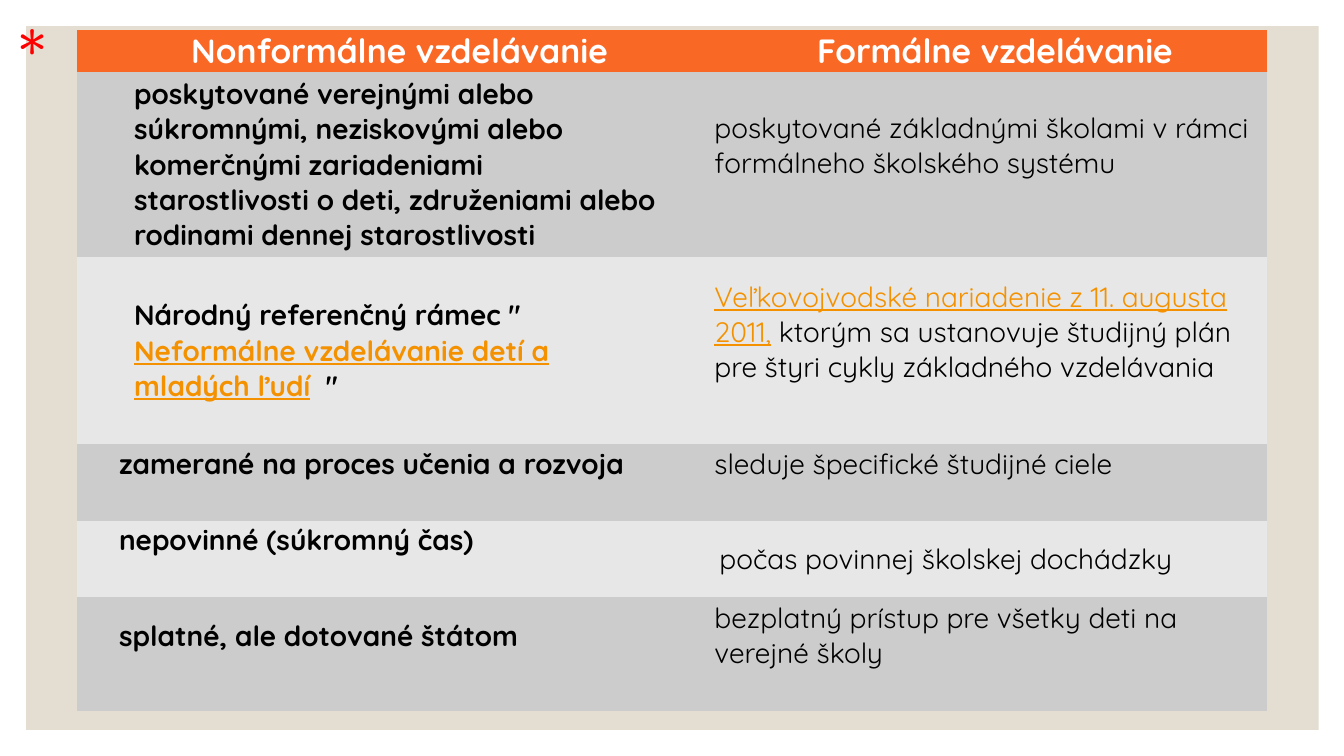
from dataclasses import dataclass

from lxml import etree
from pptx import Presentation
from pptx import util as u
from pptx.dml.color import RGBColor
from pptx.enum import shapes, text

NO_GRID_STYLE = "{2D5ABB26-0587-4C30-8999-92F81FD0307C}"
MIDDLE, TOP = text.MSO_ANCHOR.MIDDLE, text.MSO_ANCHOR.TOP


@dataclass(frozen=True)
class Theme:
    """Colours, font and type sizes of the slide."""
    font: str = "Quicksand"
    heading: int = 24
    body: int = 20
    mark: int = 60
    backdrop: str = "E3DED1"
    header: str = "FA6826"
    bands: tuple = ("CCCCCC", "E7E7E7")
    white: str = "FFFFFF"
    ink: str = "000000"
    link: str = "F49100"
    red: str = "FF0000"


@dataclass(frozen=True)
class Entry:
    """One table cell: wording with links between underscores, indent and gap below."""
    wording: str
    indent: float = 2.63
    gap: float = 4.93


class ComparisonSlide:
    """A slide on a grid of 100 columns by 100 rows."""

    def __init__(self, deck, theme):
        """Add an empty slide to the deck."""
        self.theme = theme
        self.column = deck.slide_width / 100
        self.row = deck.slide_height / 100
        self.shapes = deck.slides.add_slide(deck.slide_layouts[6]).shapes

    def x(self, columns):
        """Turn columns into a length."""
        return u.Emu(round(columns * self.column))

    def y(self, rows):
        """Turn rows into a length."""
        return u.Emu(round(rows * self.row))

    def box(self, left, top, width, height):
        """Turn a grid area into position and size."""
        return self.x(left), self.y(top), self.x(width), self.y(height)

    def style(self, run, size, colour, bold=False, underline=False):
        """Format one run."""
        run.font.name = self.theme.font
        run.font.size = u.Pt(size)
        run.font.bold = bold
        run.font.underline = underline
        run.font.color.rgb = RGBColor.from_string(colour)

    def panel(self, area, colour):
        """Draw a plain filled rectangle."""
        panel = self.shapes.add_shape(shapes.MSO_SHAPE.RECTANGLE, *self.box(*area))
        panel.shadow.inherit = False
        panel.fill.solid()
        panel.fill.fore_color.rgb = RGBColor.from_string(colour)
        panel.line.fill.background()

    def label(self, area, wording, size, colour):
        """Place a line of free text."""
        frame = self.shapes.add_textbox(*self.box(*area)).text_frame
        frame.word_wrap = True
        frame.text = wording
        self.style(frame.paragraphs[0].runs[0], size, colour)

    def fill_cell(self, cell, entry, colour, anchor):
        """Set a cell's fill, margins and anchor, and return its indented paragraph."""
        cell.fill.solid()
        cell.fill.fore_color.rgb = RGBColor.from_string(colour)
        cell.margin_left = cell.margin_right = self.x(0.53)
        cell.margin_top, cell.margin_bottom = 0, self.y(entry.gap)
        cell.vertical_anchor = anchor
        paragraph = cell.text_frame.paragraphs[0]
        properties = paragraph._p.get_or_add_pPr()
        properties.set("marL", str(self.x(entry.indent)))
        properties.set("indent", "0")
        return paragraph

    def table(self, area, heights, headings, entries):
        """Build the comparison table with a header and banded rows."""
        theme = self.theme
        table = self.shapes.add_table(len(heights), len(headings), *self.box(*area)).table
        table.horz_banding = False
        etree.SubElement
        table._tbl.tblPr.find("{*}tableStyleId").text = NO_GRID_STYLE
        for row, height in zip(table.rows, heights):
            row.height = self.y(height)
        for cell, heading in zip(table.rows[0].cells, headings):
            paragraph = self.fill_cell(cell, heading, theme.header, TOP)
            paragraph.text = heading.wording
            paragraph.alignment = text.PP_ALIGN.CENTER
            self.style(paragraph.runs[0], theme.heading, theme.white, bold=True)
        for r, pair in enumerate(entries):
            for c, entry in enumerate(pair):
                cell = table.cell(r + 1, c)
                paragraph = self.fill_cell(cell, entry, theme.bands[r % 2], MIDDLE)
                for n, part in enumerate(entry.wording.split("_")):
                    if part:
                        run = paragraph.add_run()
                        run.text = part
                        linked = n % 2 == 1
                        self.style(run, theme.body, theme.link if linked else theme.ink,
                                   bold=c == 0, underline=linked)


HEADINGS = [Entry("Nonformálne vzdelávanie", 3.75, 0), Entry("Formálne vzdelávanie", 3.75, 0)]
ENTRIES = [
    (Entry("poskytované verejnými alebo súkromnými, neziskovými alebo komerčnými zariadeniami "
           "starostlivosti o deti, združeniami alebo rodinami dennej starostlivosti", 3.75, 0),
     Entry("poskytované základnými školami v rámci formálneho školského systému")),
    (Entry('Národný referenčný rámec "  _Neformálne vzdelávanie detí a mladých ľudí_  "', 3.75, 0),
     Entry("_Veľkovojvodské nariadenie z 11. augusta 2011,_ ktorým sa ustanovuje študijný plán "
           "pre štyri cykly základného vzdelávania")),
    (Entry("zamerané na proces učenia a rozvoja"), Entry("sleduje špecifické študijné ciele")),
    (Entry("nepovinné (súkromný čas)"), Entry("počas povinnej školskej dochádzky", 3, 0)),
    (Entry("splatné, ale dotované štátom"),
     Entry("bezplatný prístup pre všetky deti na verejné školy")),
]
ROW_HEIGHTS = [4.93, 24.4, 24.8, 10.13, 10.13, 15.07]


def main():
    """Build and save the slide."""
    deck = Presentation()
    deck.slide_width, deck.slide_height = u.Inches(13.33), u.Inches(7.5)
    theme = Theme()
    slide = ComparisonSlide(deck, theme)
    slide.panel((1.95, 3.47, 96.17, 93.07), theme.backdrop)
    slide.table((5.7, 4, 88.6, sum(ROW_HEIGHTS)), ROW_HEIGHTS, HEADINGS, ENTRIES)
    slide.label((0.68, 0, 5.78, 14.8), "*", theme.mark, theme.red)
    deck.save("out.pptx")


if __name__ == "__main__":
    main()
